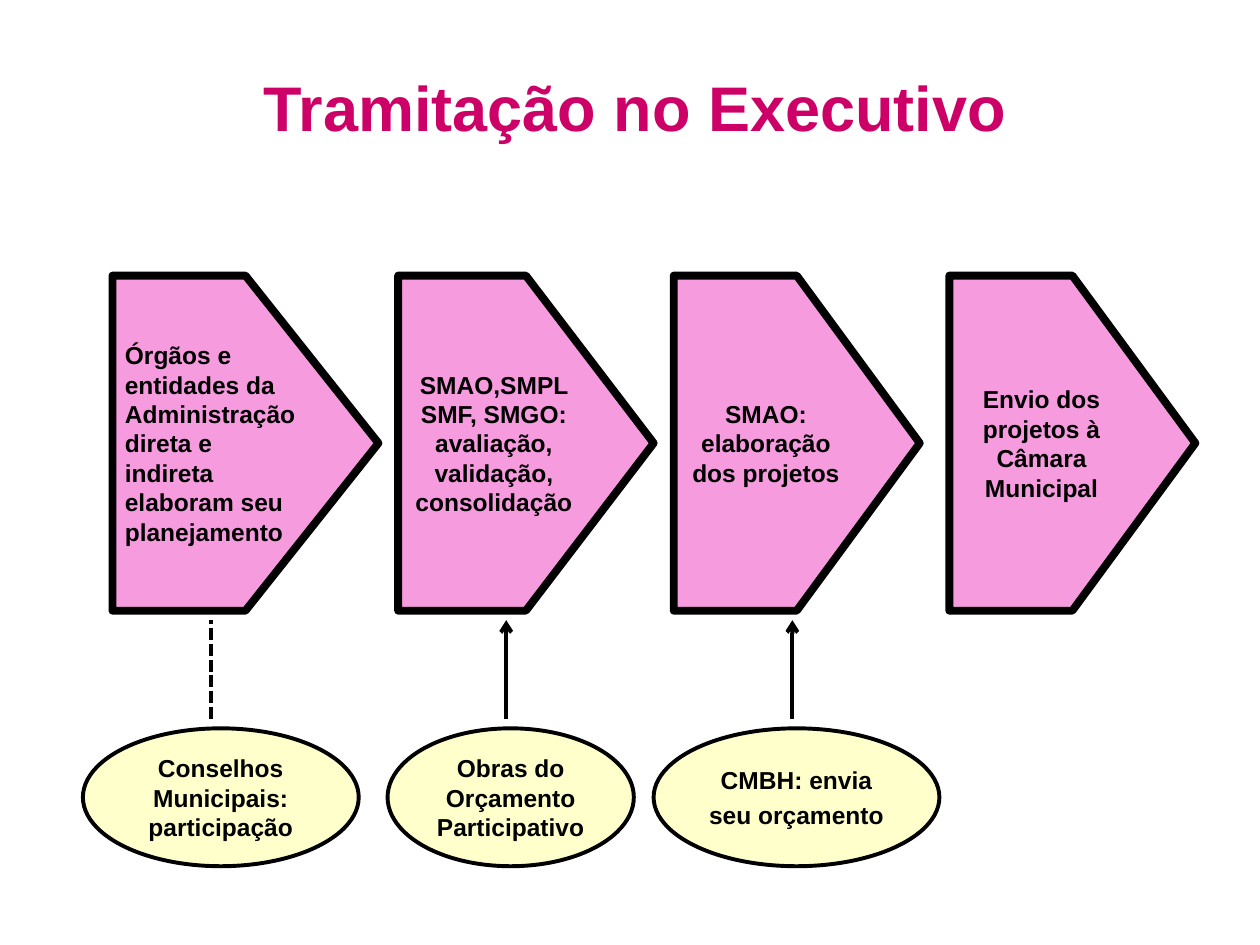
from lxml import etree
from pptx import Presentation
from pptx.dml.color import RGBColor
from pptx.enum.dml import MSO_LINE
from pptx.enum.shapes import MSO_CONNECTOR, MSO_SHAPE
from pptx.enum.text import MSO_ANCHOR, MSO_AUTO_SIZE, PP_ALIGN
from pptx.oxml.ns import qn
from pptx.util import Pt

COLORS = {"title": "CC0066", "step": "F69CDE", "input": "FFFFCC", "ink": "000000"}
FONT = "Arial"

STEP_TOP, STEP_HEIGHT = 157.5, 191.5
STEPS = [  # left, width, paragraphs, alignment
    (64.3, 152, ["Órgãos e entidades da Administração direta e indireta "
                 "elaboram seu planejamento"], PP_ALIGN.LEFT),
    (227.5, 146, ["SMAO,SMPL SMF, SMGO:", "avaliação, validação, consolidação"],
     PP_ALIGN.CENTER),
    (385, 140.6, ["SMAO: elaboração dos projetos"], PP_ALIGN.CENTER),
    (542.5, 140.6, ["Envio dos projetos à Câmara", "Municipal"], PP_ALIGN.CENTER),
]

INPUT_TOP, INPUT_HEIGHT = 416.2, 78.8
INPUTS = [  # left, width, text
    (47.4, 157.6, "Conselhos Municipais: participação"),
    (221.5, 140.7, "Obras do Orçamento Participativo"),
]
BUDGET_BOX = (373.5, INPUT_TOP, 163.3, INPUT_HEIGHT)

LINK_TOP, LINK_BOTTOM = 354.4, 410.6
LINKS = [(120.6, True), (289.3, False), (452.8, False)]  # x, dashed


def rgb(name):
    return RGBColor.from_string(COLORS[name])


def place(sp, box):
    sp.left, sp.top, sp.width, sp.height = (Pt(v) for v in box)


def write(sp, paragraphs, align, size=14, color="ink"):
    tf = sp.text_frame
    tf.text = "\n".join(paragraphs)
    tf.word_wrap = True
    tf.auto_size = MSO_AUTO_SIZE.NONE
    tf.vertical_anchor = MSO_ANCHOR.MIDDLE
    for p in tf.paragraphs:
        p.alignment = align
        for r in p.runs:
            r.font.name, r.font.size, r.font.bold = FONT, Pt(size), True
            r.font.color.rgb = rgb(color)


def paint(sp, fill, width):
    sp.fill.solid()
    sp.fill.fore_color.rgb = rgb(fill)
    sp.line.color.rgb = rgb("ink")
    sp.line.width = Pt(width)


def add_block(slide, kind, box, paragraphs, align, fill, width):
    sp = slide.shapes.add_shape(kind, *(Pt(v) for v in box))
    sp.shadow.inherit = False
    paint(sp, fill, width)
    write(sp, paragraphs, align)


def add_title(slide, box):
    sp = slide.shapes.title
    place(sp, box)
    write(sp, ["Tramitação no Executivo"], PP_ALIGN.CENTER, 36, "title")


def add_budget_list(slide, box):
    """Body placeholder shaped as an ellipse, without bullets."""
    sp = slide.placeholders[1]
    place(sp, box)
    geom = etree.SubElement(sp._element.spPr, qn("a:prstGeom"), prst="ellipse")
    etree.SubElement(geom, qn("a:avLst"))
    paint(sp, "input", 2.25)
    write(sp, ["CMBH: envia", "seu orçamento"], PP_ALIGN.CENTER)
    for i, p in enumerate(sp.text_frame.paragraphs):
        p.space_before = Pt(3 * i)
        pPr = p._p.get_or_add_pPr()
        pPr.set("marL", "0")
        pPr.set("indent", "0")
        etree.SubElement(pPr, qn("a:buNone"))


def add_link(slide, x, dashed):
    c = slide.shapes.add_connector(MSO_CONNECTOR.STRAIGHT, Pt(x), Pt(LINK_BOTTOM),
                                   Pt(x), Pt(LINK_TOP))
    c.line.color.rgb = rgb("ink")
    c.line.width = Pt(2.25)
    if dashed:
        c.line.dash_style = MSO_LINE.SQUARE_DOT
    else:
        etree.SubElement(c.line._get_or_add_ln(), qn("a:tailEnd"), type="arrow")
    etree.SubElement(c._element.spPr, qn("a:effectLst"))


def main():
    prs = Presentation()
    prs.slide_width, prs.slide_height = Pt(720), Pt(540)
    slide = prs.slides.add_slide(prs.slide_layouts[1])

    add_title(slide, (38.9, 20.9, 648, 79.2))

    # Steps of the process
    for left, width, paragraphs, align in STEPS:
        add_block(slide, MSO_SHAPE.PENTAGON, (left, STEP_TOP, width, STEP_HEIGHT),
                  paragraphs, align, "step", 4.5)

    # Inputs below the steps
    for left, width, text in INPUTS:
        add_block(slide, MSO_SHAPE.OVAL, (left, INPUT_TOP, width, INPUT_HEIGHT),
                  [text], PP_ALIGN.CENTER, "input", 2.25)
    add_budget_list(slide, BUDGET_BOX)

    # Links from inputs to steps
    for x, dashed in LINKS:
        add_link(slide, x, dashed)

    prs.save("out.pptx")


if __name__ == "__main__":
    main()
